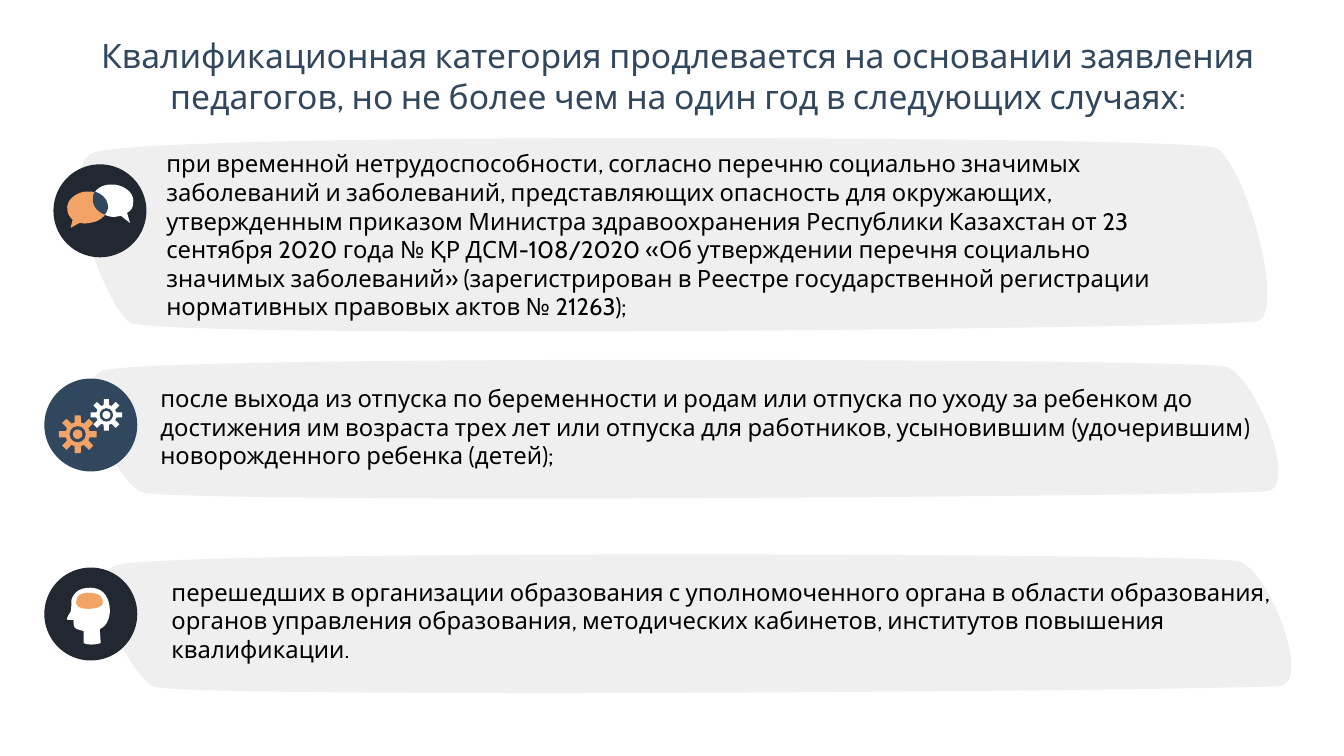
import math
import lxml.etree
import pptx
import pptx.dml.color
import pptx.enum.shapes
import pptx.enum.text
import pptx.oxml.ns
import pptx.util

Pt = pptx.util.Pt
RGBColor = pptx.dml.color.RGBColor
qn = pptx.oxml.ns.qn
GREY = RGBColor(0xEF, 0xEF, 0xEF)
DARK = RGBColor(0x22, 0x28, 0x31)
BLUE = RGBColor(0x30, 0x47, 0x5E)
AMBER = RGBColor(0xF2, 0xA3, 0x65)
WHITE = RGBColor(0xFF, 0xFF, 0xFF)
BLACK = RGBColor(0, 0, 0)

# Outlines in points: a pair is a straight step, six numbers are a Bézier step.
BAND_TALL = 99
BAND = [(433, 0), (238, 0, 41, 2, 27, 8), (0, 19, 42, 94, 57, 95),
        (78, 98, 194, 99, 333, 99), (553, 99, 827, 96, 858, 94),
        (883, 93, 851, 12, 830, 5), (819, 2, 627, 0, 433, 0)]
LEFT_TALK = [(25.2, 19.4), (23, 19.4), (15.1, 20.2, 8.6, 26.6, 10, 32.4),
             (10, 35.3, 11.5, 37.4, 13.7, 39.6), (12.2, 45.4), (18.7, 41.8),
             (21, 42.5, 23.5, 42.5, 26, 41.8),
             (33.8, 41, 39.6, 35.3, 38.9, 28.8),
             (38.2, 23, 32.4, 19.4, 25.2, 19.4)]
RIGHT_TALK = [(41, 14.4), (34.6, 14.4, 28.8, 18, 28.1, 23.8),
              (27.4, 29.5, 33.1, 36, 41, 37.4), (43.9, 37.5),
              (48.2, 36.7), (54.7, 41.8), (52.6, 34.6),
              (55.4, 33.1, 56.9, 31, 56.9, 28.1),
              (58.3, 21.6, 52.6, 15.8, 43.9, 14.4)]
OVERLAP = [(29.5, 19.4), (28.8, 20.9, 28.1, 22.3, 28.1, 23.8),
           (27.4, 28.8, 31, 33.8, 36.7, 36), (38.2, 33.8, 39.6, 31.7, 38.9, 28.8),
           (38.2, 24.5, 34.6, 20.9, 29.5, 19.4)]
HEAD = [(32.4, 14.4), (30.2, 14.6), (23.8, 15.1, 20.2, 19.4, 19.4, 23),
        (19.4, 23, 19.4, 30.2, 18.7, 31.7), (18, 33.1, 15.1, 36.7, 16.6, 37.4),
        (20.9, 37.4), (20.9, 37.4, 20.2, 43.2, 23, 43.9), (28.1, 45.4),
        (28.1, 54), (31, 55.4, 36, 55.4, 40.3, 54), (39.6, 43.9),
        (39.6, 43.9, 46.8, 41.8, 46.8, 30.2),
        (46.1, 17.3, 38.9, 14.4, 32.4, 14.4)]
BRAIN = [(31, 18), (30, 18, 23.8, 18, 23, 23), (21.6, 28.1, 26, 29.5, 31, 29.5),
         (36.7, 29.5, 41.8, 28, 41.8, 25.2), (41.8, 21.6, 40.3, 18, 31, 18)]

deck = pptx.Presentation()
deck.slide_width, deck.slide_height = Pt(960), Pt(540)
slide = deck.slides.add_slide(deck.slide_layouts[5])
shapes = slide.shapes


def draw(steps, color, left, top, scale=1):
    """Fill a closed outline; scale stretches it downwards."""
    dots = [(Pt(left + step[i]), Pt(top + step[i + 1] * scale))
            for step in steps for i in range(0, len(step), 2)]
    pen = shapes.build_freeform(*dots[0])
    pen.add_line_segments(dots[1:])
    shape = pen.convert_to_shape()
    lines = iter(list(shape._element.iter(qn("a:lnTo"))))
    for step in steps[1:]:
        curve = next(lines)
        if len(step) == 6:
            bend = lxml.etree.Element(qn("a:cubicBezTo"))
            curve.addprevious(bend)
            for line in (curve, next(lines), next(lines)):
                bend.append(line[0])
                line.getparent().remove(line)
    shape.shadow.inherit = False
    shape.fill.solid()
    shape.fill.fore_color.rgb = color
    shape.line.fill.background()


def disc(mid_x, mid_y, size, color):
    """Fill a circle of radius size."""
    shape = shapes.add_shape(pptx.enum.shapes.MSO_SHAPE.OVAL, Pt(mid_x - size),
                             Pt(mid_y - size), Pt(2 * size), Pt(2 * size))
    shape.shadow.inherit = False
    shape.fill.solid()
    shape.fill.fore_color.rgb = color
    shape.line.fill.background()


# Bands: left, top, height
for left, top, tall in [(55.4, 396, 99), (46.1, 257, 99), (38.2, 98.6, 138.2)]:
    draw(BAND, GREY, left, top, tall / BAND_TALL)

# Badges: left, top, color, icon parts
BADGE = 33.2
badges = [
    (38.2, 117.4, DARK, [(LEFT_TALK, AMBER), (RIGHT_TALK, WHITE), (OVERLAP, BLUE)]),
    (31.7, 405.4, DARK, [(HEAD, WHITE), (BRAIN, AMBER)]),
    (31.7, 270.4, BLUE, []),
]
for left, top, color, parts in badges:
    disc(left + BADGE, top + BADGE, BADGE, color)
    for steps, tint in parts:
        draw(steps, tint, left, top)

# Gears: centre, outer radius, color
TEETH = 8
TOOTH = [(-15, 0.64), (-9, 1), (9, 1), (15, 0.64)]
for mid_x, mid_y, size, color in [(55.5, 310.2, 13.7, AMBER), (76, 296.4, 11.4, WHITE)]:
    rim = []
    for tooth in range(TEETH):
        for turn, reach in TOOTH:
            angle = math.radians(360 / TEETH * tooth + turn)
            rim.append((size * reach * math.cos(angle), size * reach * math.sin(angle)))
    draw(rim, color, mid_x, mid_y)
    disc(mid_x, mid_y, size * 0.42, BLUE)
    disc(mid_x, mid_y, size * 0.25, color)

# Title and texts: box, place, size, color, alignment, wording
ALIGN = pptx.enum.text.PP_ALIGN
texts = [
    (shapes.title, (51.1, 28.8, 866.2, 50.4), 24, BLUE, ALIGN.CENTER,
     "Квалификационная категория продлевается на основании заявления педагогов, "
     "но не более чем на один год в следующих случаях:"),
    (None, (109.4, 110.2, 739.4, 115.2), 17, BLACK, ALIGN.LEFT,
     "при временной нетрудоспособности, согласно перечню социально значимых "
     "заболеваний и заболеваний, представляющих опасность для окружающих, "
     "утвержденным приказом Министра здравоохранения Республики Казахстан от 23 "
     "сентября 2020 года № ҚР ДСМ-108/2020 «Об утверждении перечня социально "
     "значимых заболеваний» (зарегистрирован в Реестре государственной регистрации "
     "нормативных правовых актов № 21263);"),
    (None, (105.1, 277.2, 838, 55.4), 17, BLACK, ALIGN.LEFT,
     "после выхода из отпуска по беременности и родам или отпуска по уходу за "
     "ребенком до достижения им возраста трех лет или отпуска для работников, "
     "усыновившим (удочерившим) новорожденного ребенка (детей);"),
    (None, (113, 415.4, 838, 55.4), 17, BLACK, ALIGN.LEFT,
     "перешедших в организации образования с уполномоченного органа в области "
     "образования, органов управления образования, методических кабинетов, "
     "институтов повышения квалификации."),
]
for box, place, size, color, align, words in texts:
    left, top, wide, tall = map(Pt, place)
    box = box or shapes.add_textbox(left, top, wide, tall)
    box.left, box.top, box.width, box.height = left, top, wide, tall
    frame = box.text_frame
    frame.word_wrap = True
    frame.auto_size = pptx.enum.text.MSO_AUTO_SIZE.NONE
    frame.vertical_anchor = pptx.enum.text.MSO_ANCHOR.MIDDLE
    frame.margin_left = frame.margin_right = Pt(9.4)
    frame.margin_top = frame.margin_bottom = Pt(9.4)
    line = frame.paragraphs[0]
    line.alignment = align
    run = line.add_run()
    run.text = words
    run.font.name = "Cabin"
    run.font.size = Pt(size)
    run.font.color.rgb = color

deck.save("out.pptx")
